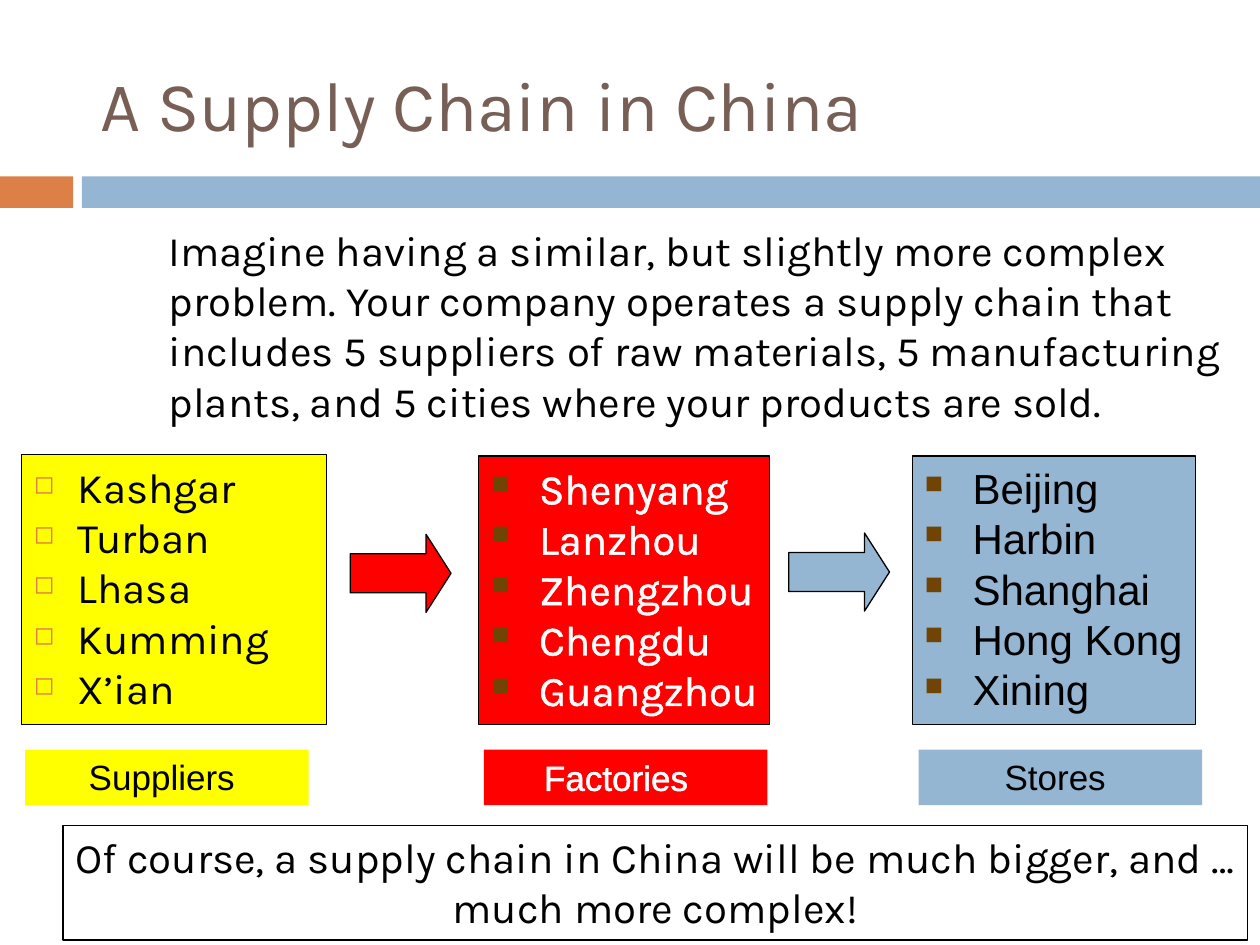
from lxml import etree
from pptx import Presentation
from pptx.dml.color import RGBColor
from pptx.enum.shapes import MSO_SHAPE as Shape
from pptx.enum.text import MSO_ANCHOR as Anchor, PP_ALIGN as Align
from pptx.oxml.ns import qn
from pptx.util import Inches, Pt

ORANGE = RGBColor(0xDD, 0x80, 0x47)
BLUE = RGBColor(0x94, 0xB6, 0xD2)
YELLOW = RGBColor(0xFF, 0xFF, 0x00)
RED = RGBColor(0xFF, 0x00, 0x00)
BROWN = RGBColor(0x70, 0x44, 0x04)
TAUPE = RGBColor(0x77, 0x5F, 0x55)
BLACK = RGBColor(0x00, 0x00, 0x00)
WHITE = RGBColor(0xFF, 0xFF, 0xFF)

deck = Presentation()
deck.slide_width, deck.slide_height = Inches(10), Inches(7.5)
slide = deck.slides.add_slide(deck.slide_layouts[6])

# Grid of 100 columns by 75 rows
COL = deck.slide_width / 100
ROW = deck.slide_height / 75


def add_box(left, top, width, height, fill=None, line=None, kind=Shape.RECTANGLE):
    """Add a shape placed in columns and rows."""
    box = slide.shapes.add_shape(kind, round(left * COL), round(top * ROW),
                                 round(width * COL), round(height * ROW))
    box.shadow.inherit = False
    if fill is None:
        box.fill.background()
    else:
        box.fill.solid()
        box.fill.fore_color.rgb = fill
    if line is None:
        box.line.fill.background()
    else:
        box.line.color.rgb = line
        box.line.width = Pt(0.75)
    return box


def write(box, lines, size, font, color, align=Align.LEFT, anchor=Anchor.TOP,
          right=1, outlined=False, bullet=None):
    """Fill a box with one paragraph per line; bullet is (sign, color, indent)."""
    frame = box.text_frame
    frame.word_wrap = True
    frame.vertical_anchor = anchor
    frame.margin_right = round(right * COL)
    for number, line in enumerate(lines):
        para = frame.paragraphs[0] if number == 0 else frame.add_paragraph()
        para.alignment = align
        if size == 24:
            para.line_spacing = Pt(28.8)
        run = para.add_run()
        run.text = line
        run.font.size, run.font.name = Pt(size), font
        run.font.color.rgb = color
        if outlined:
            outline = etree.Element(qn("a:ln"), w=str(Pt(1.45)))
            solid = etree.SubElement(outline, qn("a:solidFill"))
            etree.SubElement(solid, qn("a:srgbClr"), val=str(color))
            run.font._element.insert(0, outline)
        if bullet:
            sign, sign_color, indent = bullet
            props = para._p.get_or_add_pPr()
            props.set("marL", str(round(indent * COL)))
            props.set("indent", str(-round(indent * COL)))
            tint = etree.SubElement(props, qn("a:buClr"))
            etree.SubElement(tint, qn("a:srgbClr"), val=str(sign_color))
            etree.SubElement(props, qn("a:buSzPct"), val="60000")
            etree.SubElement(props, qn("a:buChar"), char=sign)


# Title and the band below it
add_box(0, 14, 5.8, 2.5, ORANGE)
add_box(6.5, 14, 93.5, 2.5, BLUE)
write(add_box(7, 2, 85.2, 12.5), ["A Supply Chain in China"], 40, "Karla", TAUPE,
      anchor=Anchor.MIDDLE)

# Introduction
write(add_box(12.4, 17.3, 86.6, 17.2),
      ["Imagine having a similar, but slightly more complex problem. Your company "
       "operates a supply chain that includes 5 suppliers of raw materials, "
       "5 manufacturing plants, and 5 cities where your products are sold."],
      24, "Karla", BLACK)

# Stages: list left, top, width, height; label left and right inset
hollow, solid_square = ("◻", ORANGE, 3.5), ("■", BROWN, 3.8)
stages = [
    ("Suppliers", ["Kashgar", "Turban", "Lhasa", "Kumming", "X’ian"],
     (1.7, 36.1, 24.2, 21.4), (2, 1.8), YELLOW, BLACK, "Karla", hollow),
    ("Factories", ["Shenyang", "Lanzhou", "Zhengzhou", "Chengdu", "Guangzhou"],
     (38, 36.2, 23.1, 21.3), (38.4, 2.5), RED, WHITE, "Karla", solid_square),
    ("Stores", ["Beijing", "Harbin", "Shanghai", "Hong Kong", "Xining"],
     (72.4, 36.2, 22.5, 21.3), (72.9, 1.8), BLUE, BLACK, "Arial", solid_square),
]
for stage, cities, area, (label_left, inset), fill, ink, font, bullet in stages:
    outlined = ink == WHITE
    write(add_box(*area, fill, BLACK), cities, 24, font, ink,
          right=0, outlined=outlined, bullet=bullet)
    write(add_box(label_left, 59.5, 22.5, 4.4, fill), [stage], 20, "Arial", ink,
          Align.CENTER, right=inset, outlined=outlined)

# Arrows between the stages
for left, top, fill in [(27.8, 42.4, RED), (62.6, 42.3, BLUE)]:
    arrow = add_box(left, top, 8, 6.2, fill, BLACK, Shape.RIGHT_ARROW)
    arrow.adjustments[0], arrow.adjustments[1] = 0.5, 0.32

# Closing remark
write(add_box(5, 65.5, 94, 9.1, line=BLACK),
      ["Of course, a supply chain in China will be much bigger, and … "
       "much more complex!"], 24, "Karla", BLACK, Align.CENTER)

deck.save("out.pptx")
